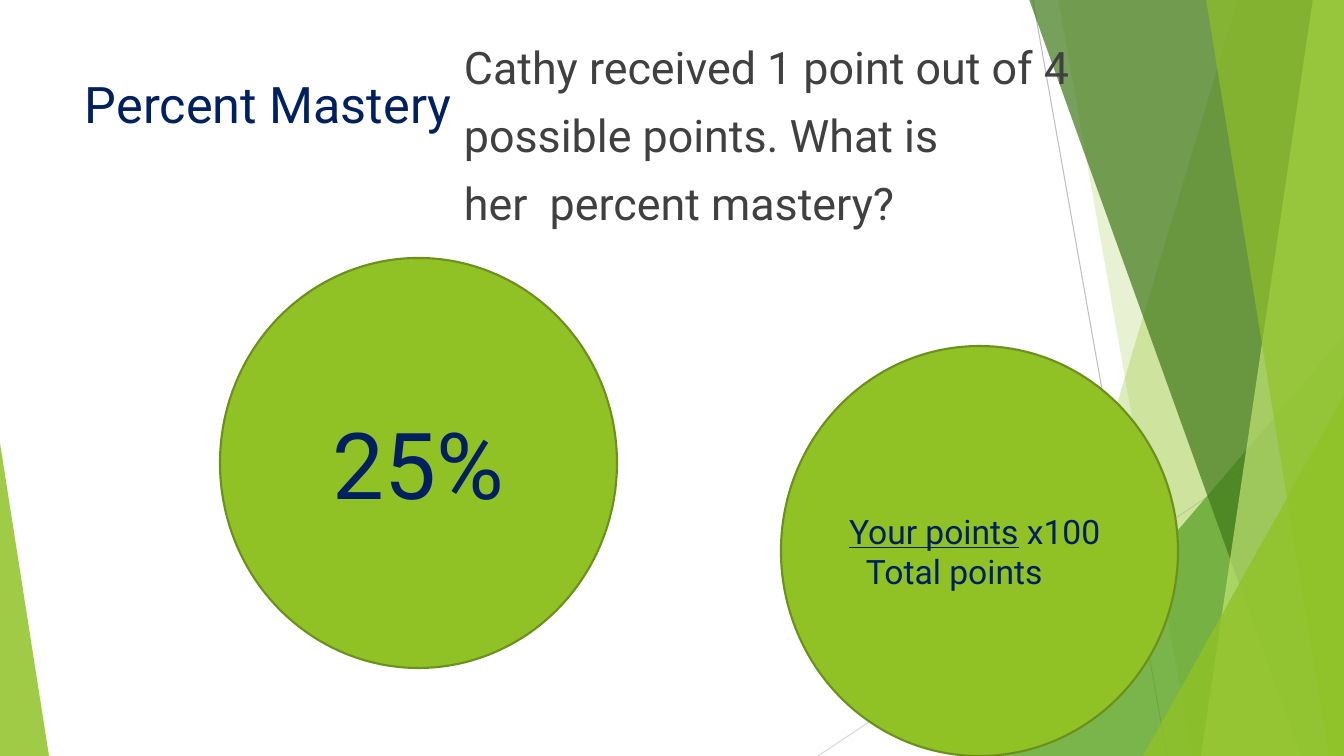
import lxml.etree
import pptx
import pptx.util
import pptx.dml.color
import pptx.enum.shapes
import pptx.enum.text
import pptx.oxml.ns

EMU_PER_PX = 914400 / 100.8
WIDTH, HEIGHT = 1344, 756
GREEN, NAVY, GRAY = "90C226", "002060", "404040"
qn = pptx.oxml.ns.qn
MSO_SHAPE = pptx.enum.shapes.MSO_SHAPE
PP_ALIGN = pptx.enum.text.PP_ALIGN


def px(*lengths):
    """Turn pixel lengths into a list of EMU lengths."""
    return [pptx.util.Emu(round(n * EMU_PER_PX)) for n in lengths]


def rgb(color):
    return pptx.dml.color.RGBColor.from_string(color)


prs = pptx.Presentation()
prs.slide_width, prs.slide_height = px(WIDTH, HEIGHT)
slide = prs.slides.add_slide(prs.slide_layouts[6])
shapes = slide.shapes

# Thin lines behind the facets
for ends, color in [((1033, 0, 1167, 756), "BFBFBF"), ((1344, 406, 818, 756), "D9D9D9")]:
    line = shapes.add_connector(pptx.enum.shapes.MSO_CONNECTOR.STRAIGHT, *px(*ends))
    line.line.color.rgb = rgb(color)
    line.line.width = pptx.util.Pt(0.75)
    lxml.etree.SubElement(line._element.spPr, qn("a:effectLst"))

# Bands run from (top x, bottom x) to the right edge;
# triangles stand on the bottom edge: (left, top, width, apex)
facets = [
    ("band", (1238, 1012), GREEN, 30),
    ("band", (1058, 1192), GREEN, 20),
    ("triangle", (985, 336, 359, 1), "54A021", 72),
    ("band", (1029, 1301), "3F7819", 70),
    ("band", (1313, 1201), "C0E474", 70),
    ("band", (1206, 1329), GREEN, 65),
    ("triangle", (1143, 396, 201, 1), GREEN, 80),
    ("triangle", (0, 443, 49, 0), GREEN, 85),
]
for kind, geometry, color, opacity in facets:
    if kind == "band":
        top_x, bottom_x = geometry
        outline = shapes.build_freeform(top_x, -1, scale=EMU_PER_PX)
        outline.add_line_segments([(WIDTH, -1), (WIDTH, HEIGHT), (bottom_x, HEIGHT)])
        sp = outline.convert_to_shape()
    else:
        left, top, width, apex = geometry
        sp = shapes.add_shape(MSO_SHAPE.ISOSCELES_TRIANGLE, *px(left, top, width, HEIGHT - top))
        sp.adjustments[0] = apex
    sp.shadow.inherit = False
    sp.line.fill.background()
    sp.fill.solid()
    sp.fill.fore_color.rgb = rgb(color)
    fill_color = sp._element.spPr.find(qn("a:solidFill"))[0]
    lxml.etree.SubElement(fill_color, qn("a:alpha"), val=str(opacity * 1000))

title = shapes.add_textbox(*px(75, 68, 948, 145))
title.text_frame.text = "Percent Mastery"

question = shapes.add_textbox(*px(454, 35, 655, 544))
question.text_frame.text = "Cathy received 1 point out of 4\npossible points. What is\nher  percent mastery?"
hanging = px(38)[0]
for p in question.text_frame.paragraphs:
    p.space_before = pptx.util.Pt(10)
    pPr = p._p.get_or_add_pPr()
    pPr.set("marL", str(hanging))
    pPr.set("indent", str(-hanging))

formula, answer = [
    shapes.add_shape(MSO_SHAPE.OVAL, *px(left, top, 397, 410))
    for left, top in [(781, 346), (220, 258)]
]
for circle in (formula, answer):
    circle.shadow.inherit = False
    circle.fill.solid()
    circle.fill.fore_color.rgb = rgb(GREEN)
    circle.line.color.rgb = rgb("6B901C")
    circle.line.width = pptx.util.Pt(1.5)
    circle.text_frame.vertical_anchor = pptx.enum.text.MSO_ANCHOR.MIDDLE

formula.text_frame.text = "Your points\nTotal points"
numerator, denominator = formula.text_frame.paragraphs
numerator.runs[0].font.underline = True
numerator.add_run().text = " x100"
numerator.alignment = denominator.alignment = PP_ALIGN.LEFT
denominator._p.get_or_add_pPr().set("marL", str(px(17)[0]))

answer.text_frame.text = "25%"
answer.text_frame.paragraphs[0].alignment = PP_ALIGN.CENTER

for sp, size, color in [(title, 36, NAVY), (question, 32, GRAY), (formula, 24, NAVY), (answer, 66, NAVY)]:
    tf = sp.text_frame
    tf.word_wrap = True
    for p in tf.paragraphs:
        for r in p.runs:
            r.font.name = "Roboto"
            r.font.size = pptx.util.Pt(size)
            r.font.color.rgb = rgb(color)

prs.save("out.pptx")
